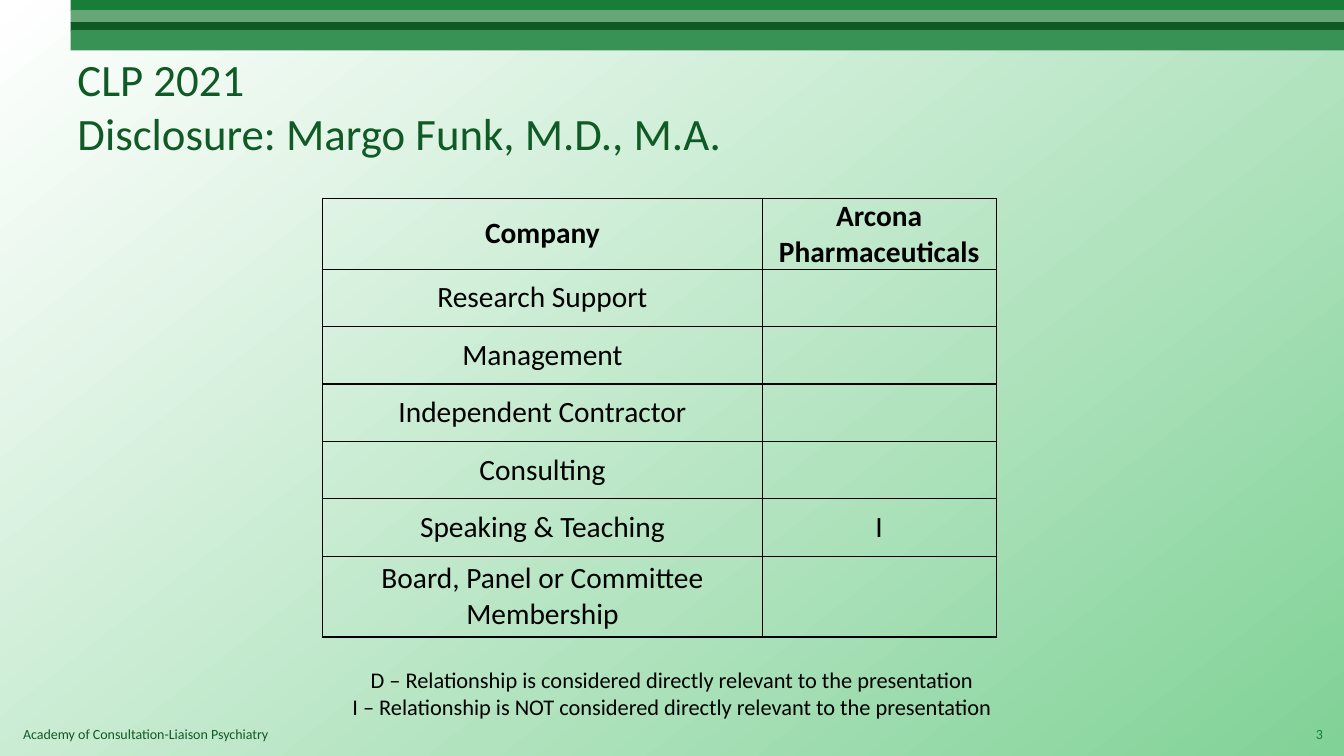
from dataclasses import dataclass

from lxml import etree
from pptx import Presentation
from pptx.dml.color import RGBColor
from pptx.enum.shapes import MSO_SHAPE
from pptx.enum.text import MSO_ANCHOR, PP_ALIGN
from pptx.oxml.ns import qn
from pptx.util import Inches, Pt

RECTANGLE = MSO_SHAPE.RECTANGLE
TOP, MIDDLE = MSO_ANCHOR.TOP, MSO_ANCHOR.MIDDLE
LEFT, CENTER, RIGHT = PP_ALIGN.LEFT, PP_ALIGN.CENTER, PP_ALIGN.RIGHT


@dataclass(frozen=True)
class Theme:
    font: str = "Calibri"
    black: str = "000000"
    dark_green: str = "105A25"
    green: str = "177D38"
    mid_green: str = "389155"
    pale_green: str = "66A677"
    back_start: str = "FFFFFF"
    back_end: str = "81D297"
    title_size: int = 32
    table_size: int = 21
    key_size: int = 16
    footer_size: int = 10
    border_width: int = 1


theme = Theme()


def write(frame, lines, size, color, align, bold=False):
    frame.text = "\n".join(lines)
    frame.word_wrap = True
    for para in frame.paragraphs:
        para.alignment = align
        for span in para.runs:
            span.font.name = theme.font
            span.font.size = Pt(size)
            span.font.bold = bold
            span.font.color.rgb = RGBColor.from_string(color)


def add_border(cell):
    properties = cell._tc.get_or_add_tcPr()
    for side in ("lnL", "lnR", "lnT", "lnB"):
        line = etree.SubElement(properties, qn(f"a:{side}"), w=str(Pt(theme.border_width)))
        fill = etree.SubElement(line, qn("a:solidFill"))
        etree.SubElement(fill, qn("a:srgbClr"), val=theme.black)


deck = Presentation()
deck.slide_width, deck.slide_height = Inches(13.33), Inches(7.5)
page = deck.slides.add_slide(deck.slide_layouts[6])

# Background gradient
backdrop = page.background.fill
backdrop.gradient()
backdrop.gradient_angle = 360 - 52
for stop, color in zip(backdrop.gradient_stops, (theme.back_start, theme.back_end)):
    stop.color.rgb = RGBColor.from_string(color)

# Stripes across the top
stripes = [
    (0, 0.11, theme.green),
    (0.1, 0.13, theme.pale_green),
    (0.22, 0.09, theme.dark_green),
    (0.3, 0.2, theme.mid_green),
]
for top, height, color in stripes:
    stripe = page.shapes.add_shape(
        RECTANGLE, Inches(0.7), Inches(top), Inches(12.65), Inches(height))
    stripe.shadow.inherit = False
    stripe.fill.solid()
    stripe.fill.fore_color.rgb = RGBColor.from_string(color)
    stripe.line.fill.background()

# Title, footer, page number and key to the table
texts = [
    ((0.67, 0.42, 12, 1.25), ["CLP 2021\vDisclosure: Margo Funk, M.D., M.A."],
     theme.title_size, theme.dark_green, LEFT, MIDDLE),
    ((0.13, 7.15, 9.25, 0.27), ["Academy of Consultation-Liaison Psychiatry"],
     theme.footer_size, theme.dark_green, LEFT, TOP),
    ((12.69, 7.08, 0.53, 0.4), ["3"],
     theme.footer_size, theme.green, RIGHT, MIDDLE),
    ((2.25, 6.56, 8.83, 0.64),
     ["D – Relationship is considered directly relevant to the presentation",
      "I – Relationship is NOT considered directly relevant to the presentation"],
     theme.key_size, theme.black, CENTER, TOP),
]
for place, lines, size, color, align, anchor in texts:
    box = page.shapes.add_textbox(*map(Inches, place))
    box.text_frame.vertical_anchor = anchor
    write(box.text_frame, lines, size, color, align)

# Disclosure table
rows = [
    ("Company", "Arcona Pharmaceuticals", 0.7),
    ("Research Support", "", 0.57),
    ("Management", "", 0.57),
    ("Independent Contractor", "", 0.57),
    ("Consulting", "", 0.57),
    ("Speaking & Teaching", "I", 0.57),
    ("Board, Panel or Committee Membership", "", 0.8),
]
table = page.shapes.add_table(
    len(rows), 2, Inches(3.2), Inches(1.97), Inches(6.68), Inches(4.33)).table
table.first_row = table.horz_banding = False
for column, width in zip(table.columns, (4.36, 2.32)):
    column.width = Inches(width)
for index, (activity, relation, height) in enumerate(rows):
    table.rows[index].height = Inches(height)
    for cell, words in zip(table.rows[index].cells, (activity, relation)):
        add_border(cell)
        cell.fill.background()
        cell.vertical_anchor = MIDDLE
        cell.margin_left = cell.margin_right = Inches(0.1)
        cell.margin_top = cell.margin_bottom = 0
        write(cell.text_frame, [words], theme.table_size, theme.black, CENTER, index == 0)

deck.save("out.pptx")
